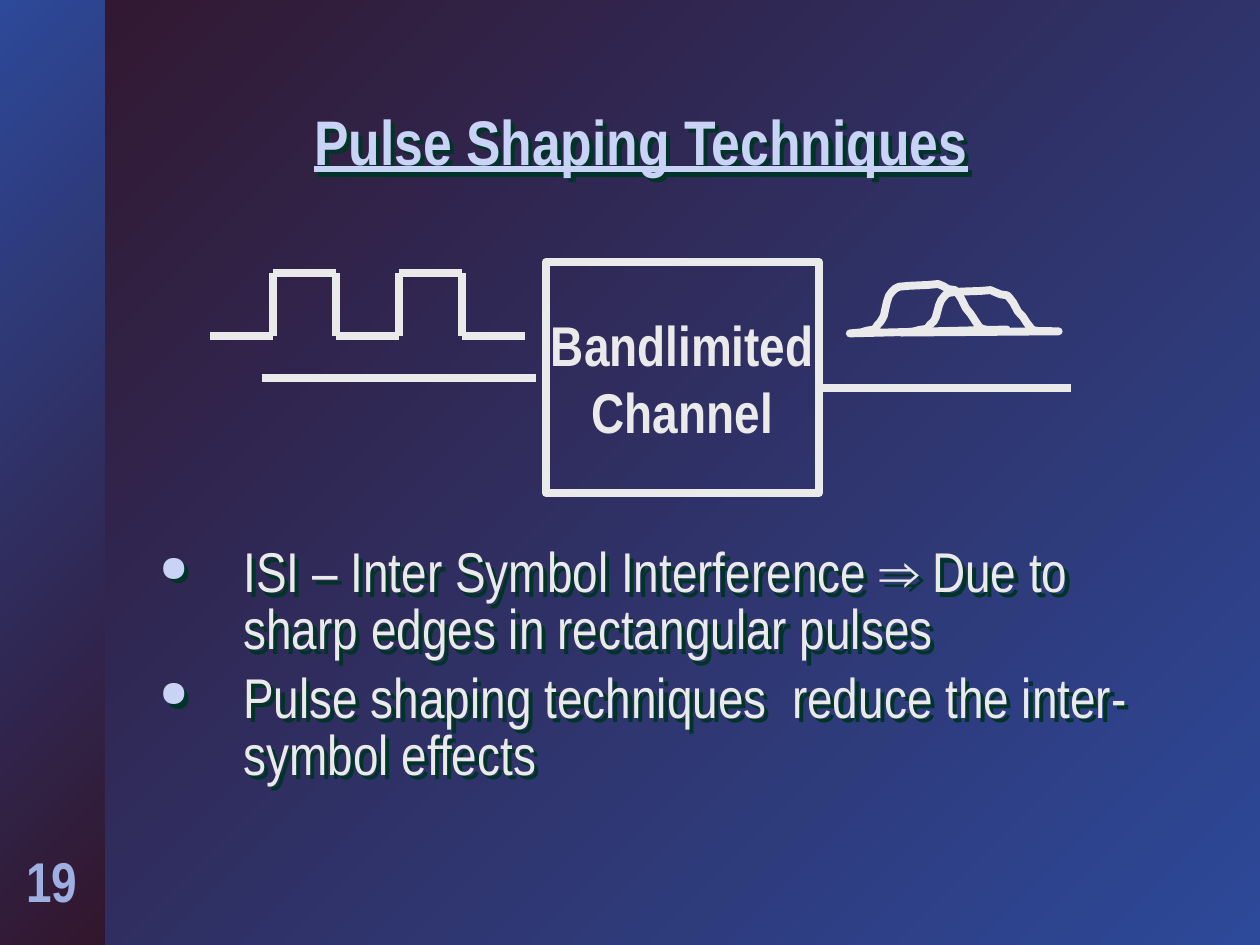
from lxml.etree import SubElement
from pptx import Presentation
from pptx.dml.color import RGBColor
from pptx.enum.shapes import MSO_CONNECTOR, MSO_SHAPE
from pptx.enum.text import MSO_ANCHOR, PP_ALIGN
from pptx.oxml.ns import qn
from pptx.util import Inches, Pt

SCALE = Inches(10) / 1260
FONT = "Arial Narrow"
NIGHT, BLUE = "32162D", "2D4999"
CHALK, PALE, NUMBER = "EAEAEA", "C8D3F6", "9EB0E2"
SHADE = "003428"
PULSE = [
    (0, 0), (11, 1), (18, 3), (24, 4), (26, 6), (28, 9), (30, 11), (32, 14),
    (34, 18), (35, 23), (37, 32), (39, 38), (42, 42), (45, 45), (49, 47),
    (59, 48), (78, 49), (88, 50), (93, 48), (98, 45), (105, 44), (107, 42),
    (111, 36), (116, 26), (121, 20), (125, 14), (129, 8), (131, 6),
    (135, 5), (141, 4), (157, 5),
]


def px(length):
    """Turn pixels into EMU."""
    return round(length * SCALE)


def rgb(code):
    """Return the colour of a hex string."""
    return RGBColor.from_string(code)


def shade(fill, start, end):
    """Fill with a diagonal gradient from top left to bottom right."""
    fill.gradient()
    fill.gradient_angle = 315
    for stop, code in zip(fill.gradient_stops, (start, end)):
        stop.color.rgb = rgb(code)


def draw_stroke(line):
    """Give a line the thick chalk stroke."""
    line.color.rgb = rgb(CHALK)
    line.width = Pt(4.5)


def write(frame, lines, size, color, bold=False, underline=None, align=PP_ALIGN.CENTER):
    """Write one paragraph per line in one format."""
    frame.text = "\n".join(lines)
    for paragraph in frame.paragraphs:
        paragraph.alignment = align
        for run in paragraph.runs:
            font = run.font
            font.name, font.size = FONT, Pt(size)
            font.bold, font.underline = bold, underline
            font.color.rgb = rgb(color)


def add_text(slide, left, top, width, height, lines, size, color, **style):
    """Add a wrapping text box."""
    box = slide.shapes.add_textbox(px(left), px(top), px(width), px(height))
    box.text_frame.word_wrap = True
    write(box.text_frame, lines, size, color, **style)
    return box


def cast_shadow(box):
    """Let the text of a box cast a dark shadow down and right."""
    effects = SubElement(box.element.spPr, qn("a:effectLst"))
    shadow = SubElement(effects, qn("a:outerShdw"), dist=str(px(6)), dir="2700000", algn="ctr")
    SubElement(shadow, qn("a:srgbClr"), val=SHADE)


def add_bullet(paragraph):
    """Give a paragraph a pale round bullet and a hanging indent."""
    properties = paragraph._p.get_or_add_pPr()
    properties.set("marL", str(px(84)))
    properties.set("indent", str(-px(84)))
    color = SubElement(properties, qn("a:buClr"))
    SubElement(color, qn("a:srgbClr"), val=PALE)
    SubElement(properties, qn("a:buSzPct"), val="65000")
    SubElement(properties, qn("a:buChar"), char="●")


def add_line(slide, start, end):
    """Add a straight line between two points."""
    line = slide.shapes.add_connector(MSO_CONNECTOR.STRAIGHT, *map(px, start + end))
    draw_stroke(line.line)
    SubElement(line.element.spPr, qn("a:effectLst"))


def add_square_wave(slide, left, low, step):
    """Add two rectangular pulses on a base line."""
    high = low - step
    levels = [low, high, low, high, low]
    for index, level in enumerate(levels):
        x = left + index * step
        add_line(slide, (x, level), (x + step, level))
        if index:
            add_line(slide, (x, low), (x, high))


def add_smeared_pulse(slide, left, base, stretch, tilt):
    """Add one rounded pulse after the channel."""
    points = [(left + x, base - rise * stretch) for x, rise in PULSE]
    builder = slide.shapes.build_freeform(*points[0], scale=SCALE)
    builder.add_line_segments(points[1:], close=True)
    pulse = builder.convert_to_shape()
    pulse.rotation = tilt
    pulse.shadow.inherit = False
    pulse.fill.background()
    draw_stroke(pulse.line)
    SubElement(pulse.line._get_or_add_ln(), qn("a:round"))


def add_channel(slide):
    """Add the channel block."""
    channel = slide.shapes.add_shape(MSO_SHAPE.RECTANGLE, px(546), px(262), px(273), px(231))
    channel.shadow.inherit = False
    channel.fill.background()
    draw_stroke(channel.line)
    frame = channel.text_frame
    write(frame, ["Bandlimited", "Channel"], 32, CHALK, bold=True)
    frame.word_wrap = False
    frame.vertical_anchor = MSO_ANCHOR.MIDDLE


def add_side_band(slide):
    """Add the left band with the slide number."""
    band = slide.shapes.add_shape(MSO_SHAPE.RECTANGLE, 0, 0, px(105), px(945))
    band.shadow.inherit = False
    band.line.fill.background()
    shade(band.fill, BLUE, NIGHT)
    add_text(slide, 10, 840, 84, 79, ["19"], 32, NUMBER, bold=True)


def add_title(slide):
    """Add the underlined heading."""
    title = add_text(slide, 142, 105, 998, 83, ["Pulse Shaping Techniques"], 36, PALE,
                     bold=True, underline=True)
    title.text_frame.paragraphs[0].line_spacing = 0.9
    cast_shadow(title)


def add_points(slide):
    """Add the bulleted statements."""
    statements = [
        "ISI – Inter Symbol Interference ⇒ Due to sharp edges in rectangular pulses",
        "Pulse shaping techniques  reduce the inter-symbol effects",
    ]
    body = add_text(slide, 147, 541, 1050, 338, statements, 32, CHALK, align=PP_ALIGN.LEFT)
    for paragraph in body.text_frame.paragraphs:
        paragraph.line_spacing = 0.85
        paragraph.space_after = Pt(6.4)
        add_bullet(paragraph)
    cast_shadow(body)


def main():
    """Build the slide and save it."""
    deck = Presentation()
    deck.slide_width, deck.slide_height = px(1260), px(945)
    slide = deck.slides.add_slide(deck.slide_layouts[6])
    shade(slide.background.fill, NIGHT, BLUE)
    add_side_band(slide)
    add_title(slide)
    add_points(slide)
    add_channel(slide)
    add_line(slide, (819, 388), (1071, 388))
    add_line(slide, (262, 378), (536, 378))
    add_smeared_pulse(slide, 902, 334, 0.88, 1)
    add_smeared_pulse(slide, 850, 334, 1, 0.4)
    add_square_wave(slide, 210, 336, 63)
    deck.save("out.pptx")


if __name__ == "__main__":
    main()
